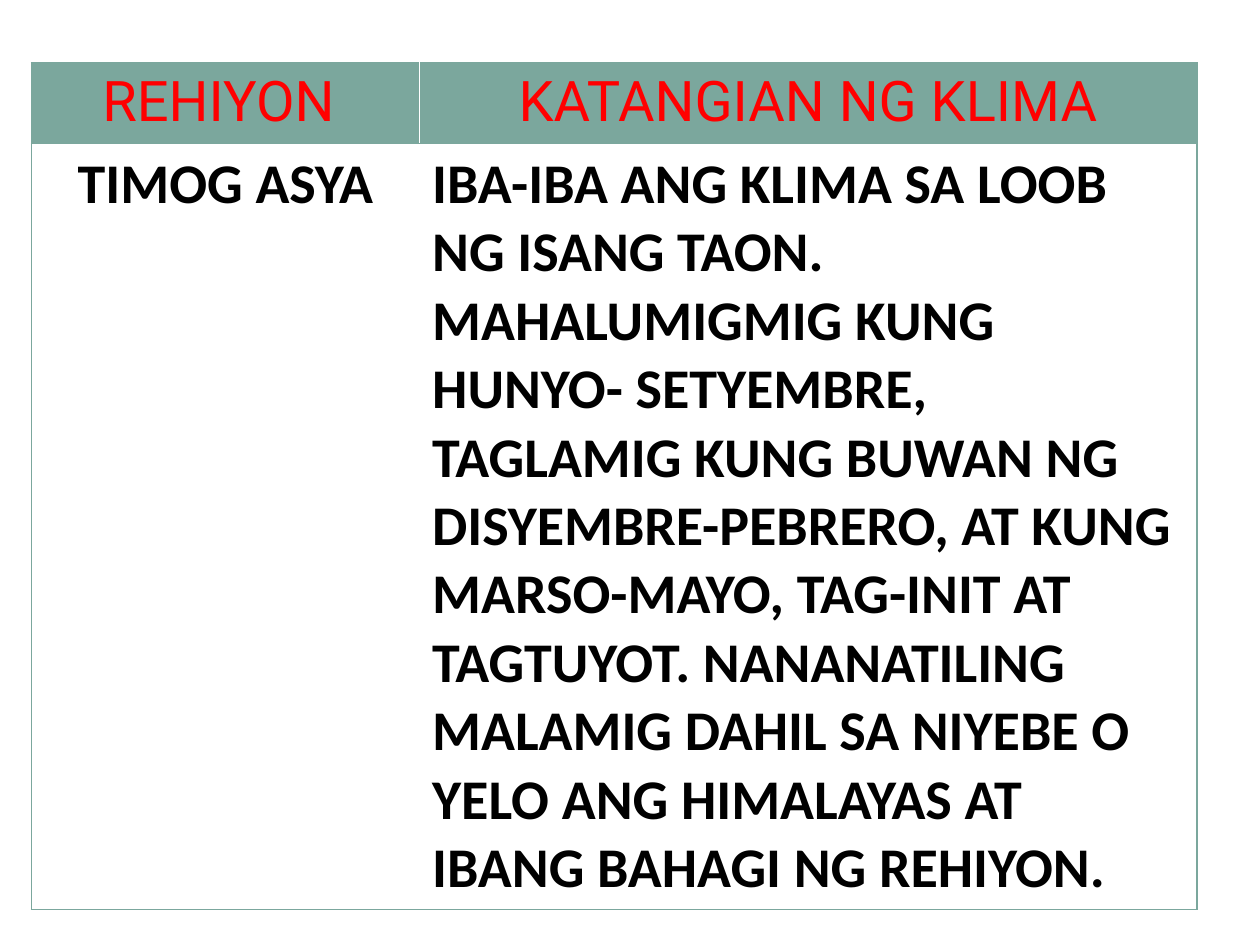
from dataclasses import dataclass

import pptx
import pptx.dml.color
import pptx.enum.text
import pptx.oxml
import pptx.oxml.ns
import pptx.util
from pptx.util import Inches


@dataclass(frozen=True)
class Theme:
    sage: str = "7BA79D"
    red: str = "FF0000"
    black: str = "000000"
    text_size: int = 32
    border_width: float = 0.79
    header_font: str = "Roboto"
    body_font: str = "Calibri"


THEME = Theme()
CENTER = pptx.enum.text.PP_ALIGN.CENTER
LEFT = pptx.enum.text.PP_ALIGN.LEFT
HEADINGS = ("REHIYON ", "KATANGIAN NG KLIMA")
REGION = "TIMOG ASYA"
CLIMATE = (
    "IBA-IBA ANG KLIMA SA LOOB NG ISANG TAON. MAHALUMIGMIG KUNG HUNYO- SETYEMBRE, "
    "TAGLAMIG KUNG BUWAN NG DISYEMBRE-PEBRERO, AT KUNG MARSO-MAYO, TAG-INIT AT "
    "TAGTUYOT. NANANATILING MALAMIG DAHIL SA NIYEBE O YELO ANG HIMALAYAS AT "
    "IBANG BAHAGI NG REHIYON."
)


def write_cell(cell, words, font_name, color, bold, alignment):
    cell.text_frame.text = words
    paragraph = cell.text_frame.paragraphs[0]
    paragraph.alignment = alignment
    font = paragraph.runs[0].font
    font.name = font_name
    font.size = pptx.util.Pt(THEME.text_size)
    font.bold = bold
    font.color.rgb = pptx.dml.color.RGBColor.from_string(color)


def add_borders(cell, sides):
    properties = cell._tc.get_or_add_tcPr()
    width = pptx.util.Pt(THEME.border_width)
    for position, side in enumerate(sides):
        border = pptx.oxml.parse_xml(
            f'<a:ln{side} {pptx.oxml.ns.nsdecls("a")} w="{width}">'
            f'<a:solidFill><a:srgbClr val="{THEME.sage}"/></a:solidFill></a:ln{side}>'
        )
        properties.insert(position, border)


def add_climate_table(slide, left, top, width, height):
    table = slide.shapes.add_table(2, 2, left, top, width, height).table
    header_height = Inches(0.64)
    table.rows[0].height = header_height
    table.rows[1].height = height - header_height
    table.columns[0].width = Inches(3.08)
    table.columns[1].width = width - Inches(3.08)

    for column, (heading, sides) in enumerate(zip(HEADINGS, ("LTB", "RTB"))):
        header, body = table.cell(0, column), table.cell(1, column)
        write_cell(header, heading, THEME.header_font, THEME.red, False, CENTER)
        header.fill.solid()
        header.fill.fore_color.rgb = pptx.dml.color.RGBColor.from_string(THEME.sage)
        body.fill.background()
        add_borders(header, sides)
        add_borders(body, sides)

    for column, (words, alignment) in enumerate(((REGION, CENTER), (CLIMATE, LEFT))):
        write_cell(table.cell(1, column), words, THEME.body_font, THEME.black, True, alignment)


def main():
    deck = pptx.Presentation()
    deck.slide_width, deck.slide_height = Inches(10), Inches(7.5)
    slide = deck.slides.add_slide(deck.slide_layouts[6])
    add_climate_table(slide, Inches(0.25), Inches(0.5), Inches(9.25), Inches(6.6))
    deck.save("out.pptx")


if __name__ == "__main__":
    main()
